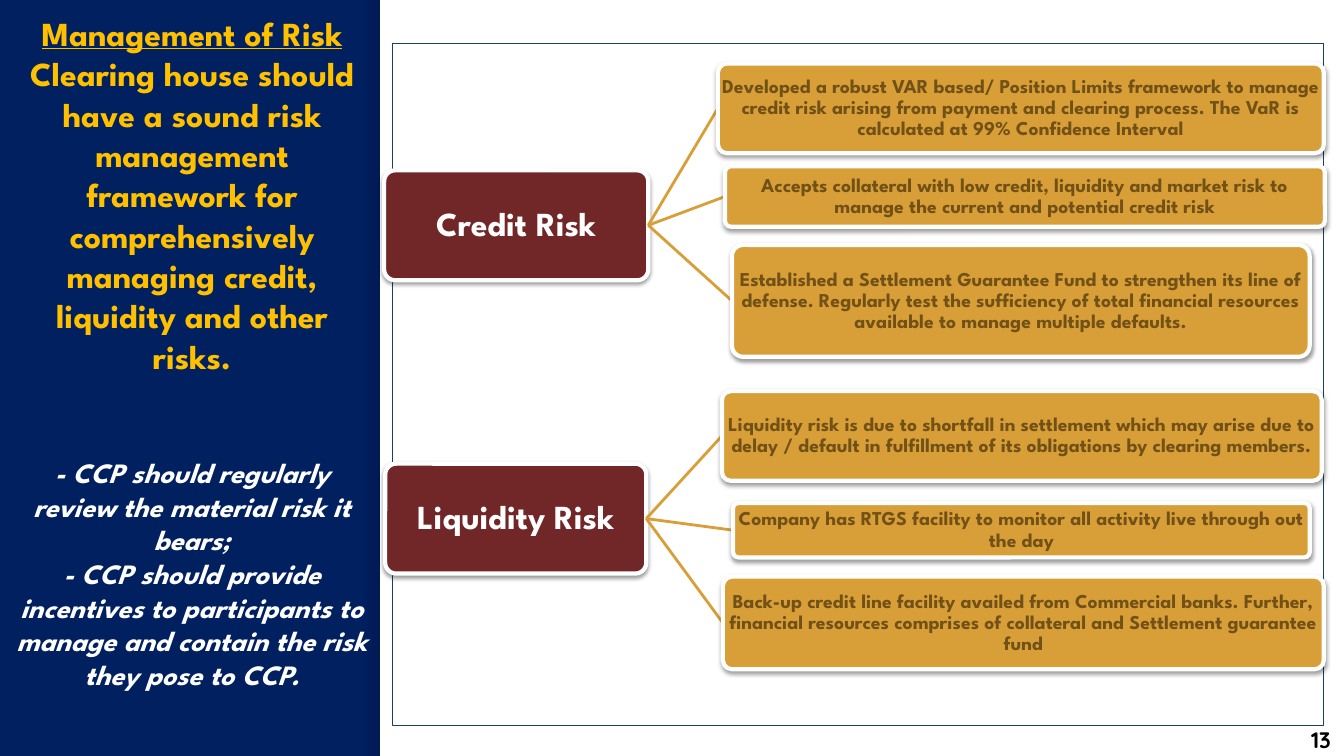
from lxml import etree
from pptx import Presentation
from pptx.dml.color import RGBColor
from pptx.enum.shapes import MSO_CONNECTOR, MSO_SHAPE
from pptx.enum.text import MSO_ANCHOR, PP_ALIGN
from pptx.oxml.ns import qn
from pptx.util import Pt

PX = 9144
RECT, ROUND = MSO_SHAPE.RECTANGLE, MSO_SHAPE.ROUNDED_RECTANGLE
LINE = MSO_CONNECTOR.STRAIGHT
MIDDLE, TOP = MSO_ANCHOR.MIDDLE, MSO_ANCHOR.TOP
CENTER, RIGHT = PP_ALIGN.CENTER, PP_ALIGN.RIGHT
NAVY = RGBColor(0x00, 0x20, 0x60)
SHADE = RGBColor(0x00, 0x00, 0x14)
WHITE = RGBColor(0xFF, 0xFF, 0xFF)
BLACK = RGBColor(0x00, 0x00, 0x00)
YELLOW = RGBColor(0xFF, 0xC0, 0x00)
STEEL = RGBColor(0x1D, 0x40, 0x5D)
MAROON = RGBColor(0x71, 0x26, 0x27)
GOLD = RGBColor(0xD8, 0x9F, 0x39)
BROWN = RGBColor(0x72, 0x51, 0x16)
SPARTAN, QUICK = "League Spartan", "Quicksand"

INTRO = ("Clearing house should have a sound risk management framework for "
         "comprehensively managing credit, liquidity and other risks.")
DUTIES = [
    "- CCP should regularly review the material risk it bears;",
    "- CCP should provide incentives to participants to manage and contain "
    "the risk they pose to CCP.",
]
RISKS = [
    ("Credit Risk", (381, 169, 262, 109), [
        ((712, 63, 601, 89),
         "Developed a robust VAR based/ Position Limits framework to manage "
         "credit risk arising from payment and clearing process. The VaR is "
         "calculated at 99% Confidence Interval"),
        ((719, 165, 595, 60),
         "Accepts collateral with low credit, liquidity and market risk to "
         "manage the current and potential credit risk"),
        ((726, 243, 573, 111),
         "Established a Settlement Guarantee Fund to strengthen its line of "
         "defense. Regularly test the sufficiency of total financial "
         "resources available to manage multiple defaults."),
    ]),
    ("Liquidity Risk", (382, 460, 259, 109), [
        ((716, 388, 595, 89),
         "Liquidity risk is due to shortfall in settlement which may arise "
         "due to delay / default in fulfillment of its obligations by "
         "clearing members."),
        ((727, 499, 572, 54),
         "Company has RTGS facility to monitor all activity live through out "
         "the day"),
        ((717, 572, 596, 92),
         "Back-up credit line facility availed from Commercial banks. "
         "Further, financial resources comprises of collateral and "
         "Settlement guarantee fund"),
    ]),
]


def scale(box):
    return [n * PX for n in box]


def set_frame(shape, inset, anchor):
    frame = shape.text_frame
    frame.word_wrap = True
    frame.vertical_anchor = anchor
    frame.margin_left = frame.margin_right = inset * PX
    frame.margin_top = frame.margin_bottom = inset * PX
    return frame


def add_run(para, text, size, color, face=SPARTAN, under=False, slant=False):
    run = para.add_run()
    run.text = text
    font = run.font
    font.name, font.size, font.bold = face, Pt(size), True
    font.underline, font.italic = under, slant
    font.color.rgb = color


def add_rect(slide, box, fill, line=None, width=0.75, kind=RECT):
    shape = slide.shapes.add_shape(kind, *scale(box))
    shape.shadow.inherit = False
    shape.fill.solid()
    shape.fill.fore_color.rgb = fill
    if line is None:
        shape.line.fill.background()
    else:
        shape.line.color.rgb = line
        shape.line.width = Pt(width)
    return shape


def add_alpha(color, percent):
    etree.SubElement(color, qn("a:alpha"), val=str(percent * 1000))


def add_edge(slide, box):
    edge = add_rect(slide, box, SHADE)
    edge.fill.gradient()
    edge.fill.gradient_angle = 0
    for stop, percent in zip(edge.fill.gradient_stops, (0, 20)):
        stop.color.rgb = SHADE
    colors = edge.fill._xPr.iter(qn("a:srgbClr"))
    for color, percent in zip(list(colors), (0, 20)):
        add_alpha(color, percent)


def add_shadow(shape):
    effects = shape._element.spPr.find(qn("a:effectLst"))
    outer = etree.SubElement(
        effects, qn("a:outerShdw"), blurRad=str(Pt(3.1)), dist=str(Pt(1.6)),
        dir="5400000", algn="ctr", rotWithShape="0")
    color = etree.SubElement(outer, qn("a:srgbClr"), val=str(BLACK))
    add_alpha(color, 38)


def add_card(slide, box, text, fill, color, size, inset):
    card = add_rect(slide, box, fill, WHITE, 3, ROUND)
    card.adjustments[0] = 0.1
    add_shadow(card)
    para = set_frame(card, inset, MIDDLE).paragraphs[0]
    para.alignment = CENTER
    para.line_spacing = 0.9
    add_run(para, text, size, color)
    return card


def add_link(slide, start):
    link = slide.shapes.add_connector(LINE, 0, 0, 0, 0)
    link.begin_connect(start, 3)
    link.line.color.rgb = GOLD
    link.line.width = Pt(2)
    etree.SubElement(link._element.spPr, qn("a:effectLst"))
    return link


def add_risk(slide, name, box, points):
    root = add_card(slide, box, name, MAROON, WHITE, 24, 2)
    for place, text in points:
        link = add_link(slide, root)
        leaf = add_card(slide, place, text, GOLD, BROWN, 14, 1)
        link.end_connect(leaf, 1)


def add_side(slide):
    side = slide.shapes.add_textbox(*scale((0, 0, 381, 750)))
    frame = set_frame(side, 13, TOP)
    para = frame.paragraphs[0]
    para.alignment = CENTER
    add_run(para, "Management of Risk ", 24, YELLOW, under=True)
    add_run(para, INTRO, 24, YELLOW)
    for gap, duty in zip((57, 0), DUTIES):
        para = frame.add_paragraph()
        para.alignment = CENTER
        para.space_before = Pt(gap)
        add_run(para, duty, 20, WHITE, slant=True)


def add_number(slide):
    number = slide.shapes.add_textbox(*scale((1253, 705, 80, 57)))
    para = set_frame(number, 13, MIDDLE).paragraphs[0]
    para.alignment = RIGHT
    add_run(para, "13", 16, BLACK, QUICK)


def main():
    deck = Presentation()
    deck.slide_width, deck.slide_height = scale((1333, 750))
    slide = deck.slides.add_slide(deck.slide_layouts[6])
    back = slide.background.fill
    back.solid()
    back.fore_color.rgb = NAVY
    add_edge(slide, (361, 0, 16, 750))
    add_rect(slide, (377, 0, 956, 750), WHITE)
    add_side(slide)
    add_number(slide)
    add_rect(slide, (389, 43, 924, 677), WHITE, STEEL)
    for name, box, points in RISKS:
        add_risk(slide, name, box, points)
    deck.save("out.pptx")


if __name__ == "__main__":
    main()
